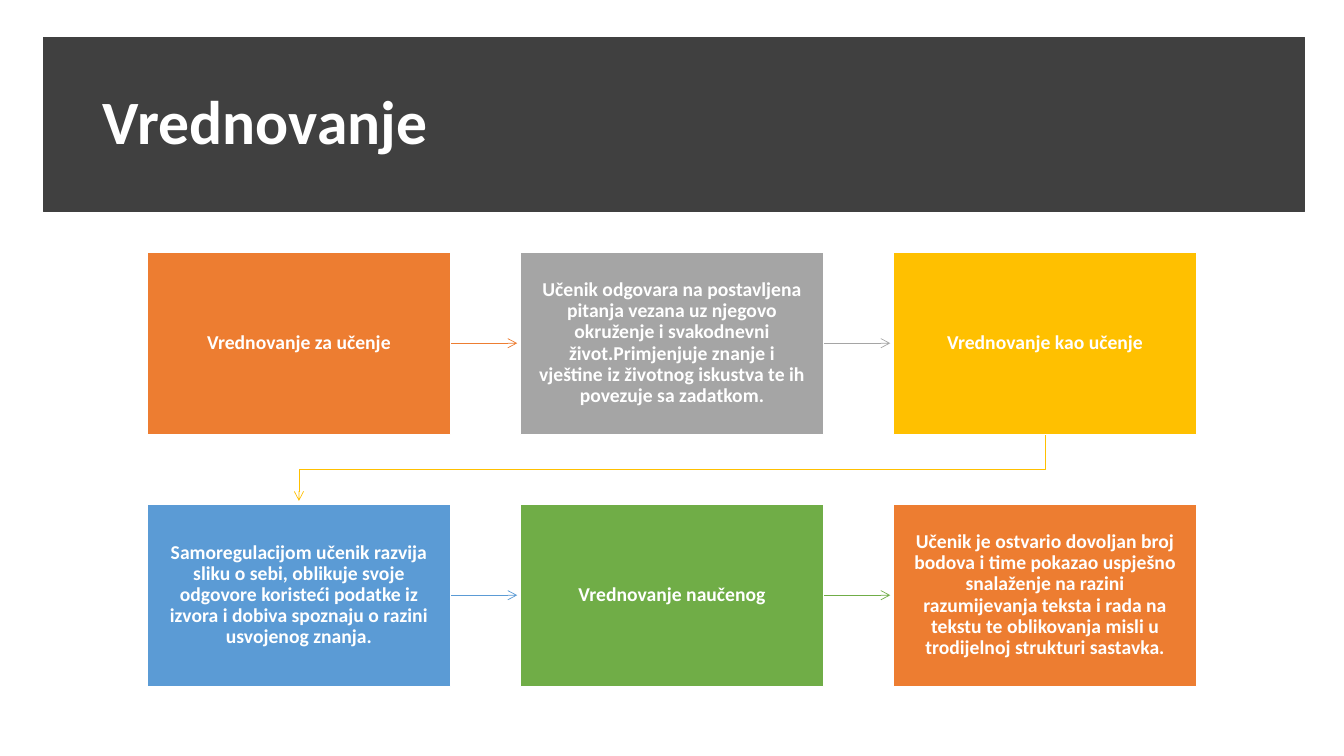
from dataclasses import dataclass
from lxml.etree import SubElement
from pptx import Presentation
from pptx.dml.color import RGBColor
from pptx.enum.shapes import MSO_CONNECTOR, MSO_SHAPE
from pptx.enum.text import MSO_ANCHOR, MSO_AUTO_SIZE, PP_ALIGN
from pptx.oxml.ns import qn
from pptx.util import Inches, Pt


@dataclass(frozen=True)
class Theme:
    font: str = "Calibri"
    title_size: float = 44
    box_size: float = 14
    white: str = "FFFFFF"
    banner: str = "404040"
    orange: str = "ED7D31"
    gray: str = "A5A5A5"
    gold: str = "FFC000"
    blue: str = "5B9BD5"
    green: str = "70AD47"


THEME = Theme()
COLUMNS = 3
LEFT, TOP = 1.46, 2.5
BOX_W, BOX_H = 3.01, 1.81
PITCH_X, PITCH_Y = 3.7, 2.5
ARROW_LENGTH = 0.66

STEPS = [
    ("Vrednovanje za učenje", THEME.orange),
    ("Učenik odgovara na postavljena pitanja vezana uz njegovo okruženje i "
     "svakodnevni život.Primjenjuje znanje i vještine iz životnog iskustva "
     "te ih povezuje sa zadatkom.", THEME.gray),
    ("Vrednovanje kao učenje", THEME.gold),
    ("Samoregulacijom učenik razvija sliku o sebi, oblikuje svoje odgovore "
     "koristeći podatke iz izvora i dobiva spoznaju o razini usvojenog "
     "znanja.", THEME.blue),
    ("Vrednovanje naučenog", THEME.green),
    ("Učenik je ostvario dovoljan broj bodova i time pokazao uspješno "
     "snalaženje na razini razumijevanja teksta i rada na tekstu te "
     "oblikovanja misli u trodijelnoj strukturi sastavka.", THEME.orange),
]


def rgb(color):
    return RGBColor.from_string(color)


def set_text(sp, text, size, align):
    tf = sp.text_frame
    tf.text = text
    tf.word_wrap = True
    tf.auto_size = MSO_AUTO_SIZE.NONE
    tf.vertical_anchor = MSO_ANCHOR.MIDDLE
    p = tf.paragraphs[0]
    p.alignment = align
    p.line_spacing = 0.9
    font = p.runs[0].font
    font.name = THEME.font
    font.size = Pt(size)
    font.bold = True
    font.color.rgb = rgb(THEME.white)


def add_rect(s, left, top, width, height, fill, line, line_width):
    sp = s.shapes.add_shape(MSO_SHAPE.RECTANGLE, Inches(left), Inches(top),
                            Inches(width), Inches(height))
    sp.shadow.inherit = False
    sp.fill.solid()
    sp.fill.fore_color.rgb = rgb(fill)
    sp.line.color.rgb = rgb(line)
    sp.line.width = Pt(line_width)
    return sp


def add_header(s, text):
    banner = add_rect(s, 0.43, 0.37, 12.51, 1.73, THEME.banner, THEME.banner, 10)
    banner.line.width = Pt(1)
    title = s.shapes.title
    title.element.addprevious(banner.element)
    title.left, title.top = Inches(0.92), Inches(0.51)
    title.width, title.height = Inches(11.5), Inches(1.45)
    set_text(title, text, THEME.title_size, PP_ALIGN.LEFT)


def add_box(s, left, top, text, fill):
    sp = add_rect(s, left, top, BOX_W, BOX_H, fill, THEME.white, 1)
    set_text(sp, text, THEME.box_size, PP_ALIGN.CENTER)
    tf = sp.text_frame
    tf.margin_left = tf.margin_right = Inches(0.15)
    tf.margin_top = tf.margin_bottom = Inches(0.15)


def style_arrow(sp, color):
    sp.line.color.rgb = rgb(color)
    sp.line.width = Pt(0.5)
    spPr = sp.element.spPr
    SubElement(spPr.find(qn("a:ln")), qn("a:tailEnd"), type="arrow")
    if spPr.find(qn("a:effectLst")) is None:
        SubElement(spPr, qn("a:effectLst"))


def add_straight_arrow(s, left, top, color):
    x, y = left + BOX_W, top + BOX_H / 2
    sp = s.shapes.add_connector(MSO_CONNECTOR.STRAIGHT, Inches(x), Inches(y),
                                Inches(x + ARROW_LENGTH), Inches(y))
    style_arrow(sp, color)


def add_return_arrow(s, left, top, color):
    start_x, end_x = left + BOX_W / 2, LEFT + BOX_W / 2
    start_y = top + BOX_H
    middle_y = (start_y + top + PITCH_Y) / 2
    points = [(start_x, middle_y), (end_x, middle_y),
              (end_x, start_y + ARROW_LENGTH)]
    builder = s.shapes.build_freeform(Inches(start_x), Inches(start_y))
    builder.add_line_segments([(Inches(x), Inches(y)) for x, y in points],
                              close=False)
    sp = builder.convert_to_shape()
    sp.shadow.inherit = False
    sp.fill.background()
    style_arrow(sp, color)


def add_flow(s):
    for i, (text, color) in enumerate(STEPS):
        row, column = divmod(i, COLUMNS)
        left, top = LEFT + column * PITCH_X, TOP + row * PITCH_Y
        if i < len(STEPS) - 1:
            add_arrow = add_return_arrow if column == COLUMNS - 1 else add_straight_arrow
            add_arrow(s, left, top, color)
        add_box(s, left, top, text, color)


def main():
    prs = Presentation()
    prs.slide_width, prs.slide_height = Inches(13.33), Inches(7.5)
    s = prs.slides.add_slide(prs.slide_layouts.get_by_name("Title Only"))
    add_header(s, "Vrednovanje")
    add_flow(s)
    prs.save("out.pptx")


if __name__ == "__main__":
    main()
